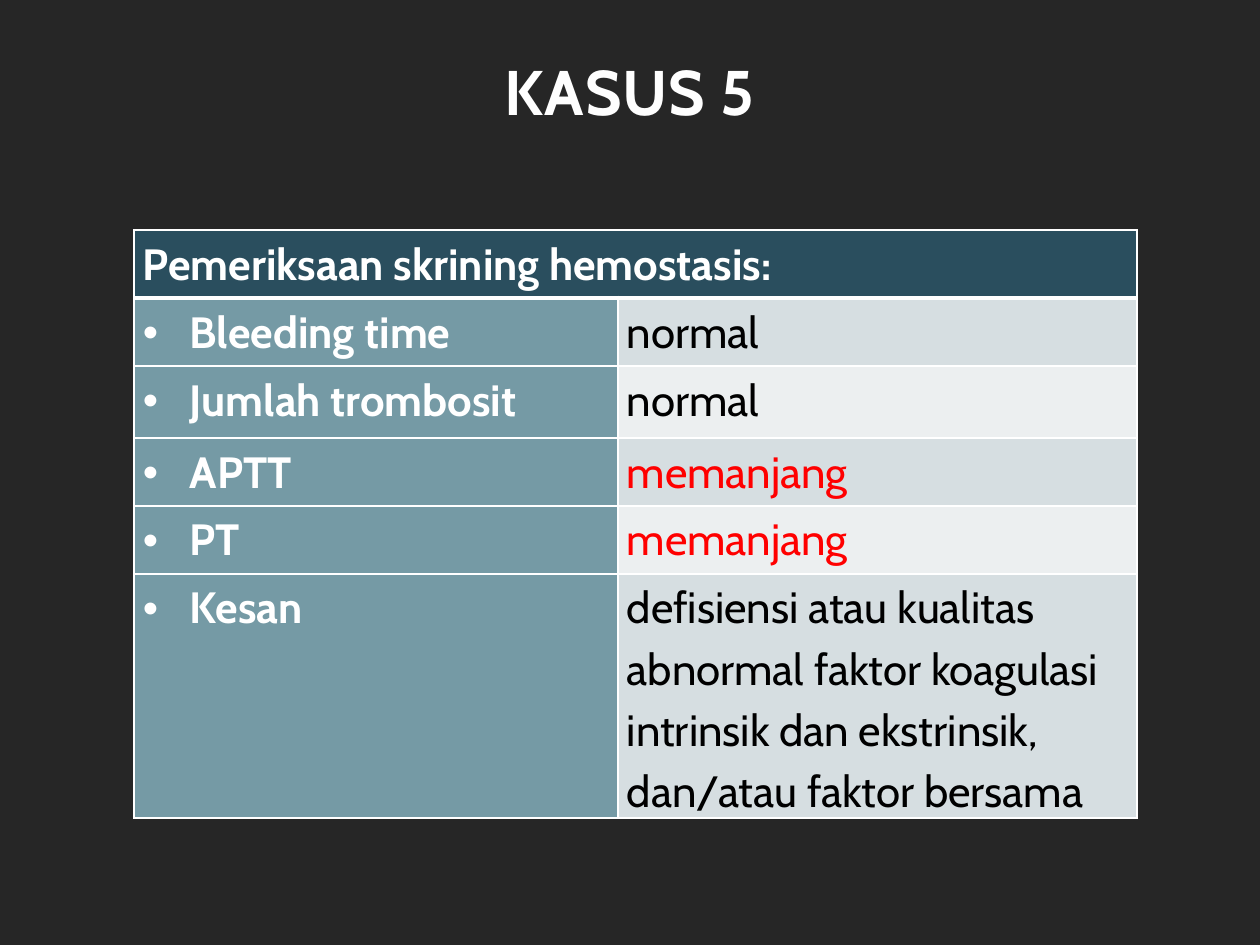
"""Build the KASUS 5 slide with its haemostasis screening table."""
import pptx
import pptx.dml.color
import pptx.enum.text
import pptx.oxml.ns
import pptx.util
from lxml import etree

RGBColor = pptx.dml.color.RGBColor
PP_ALIGN = pptx.enum.text.PP_ALIGN
PX = 914400 // 126
FONT = "Cabin"
BACKGROUND = RGBColor(0x26, 0x26, 0x26)
TITLE = RGBColor(0xFE, 0xFE, 0xFE)
WHITE = RGBColor(0xFF, 0xFF, 0xFF)
BLACK = RGBColor(0x00, 0x00, 0x00)
RED = RGBColor(0xFF, 0x00, 0x00)
HEADER = RGBColor(0x2A, 0x4E, 0x5E)
LABEL = RGBColor(0x75, 0x9A, 0xA5)
BANDS = [RGBColor(0xD6, 0xDE, 0xE1), RGBColor(0xEC, 0xEF, 0xF0)]

HEADING = "Pemeriksaan skrining hemostasis:"
RESULTS = [
    ("Bleeding time", "normal", BLACK),
    ("Jumlah trombosit", "normal", BLACK),
    ("APTT", "memanjang", RED),
    ("PT", "memanjang", RED),
    ("Kesan", "defisiensi atau kualitas abnormal faktor koagulasi intrinsik "
     "dan ekstrinsik, dan/atau faktor bersama", BLACK),
]
COL_WIDTHS = [484, 519]
ROW_HEIGHTS = [68, 68, 72, 68, 68, 244]


def format_run(p, size, color, bold):
    r = p.runs[0]
    r.font.name = FONT
    r.font.size = pptx.util.Pt(size)
    r.font.bold = bold
    r.font.color.rgb = color
    return r


def fill_cell(cell, text, color, bold, fill, bottom=1):
    cell.margin_left = cell.margin_right = 9 * PX
    cell.margin_top = cell.margin_bottom = 0
    tcPr = cell._tc.get_or_add_tcPr()
    for side, width in (("L", 1), ("R", 1), ("T", 1), ("B", bottom)):
        ln = etree.SubElement(tcPr, pptx.oxml.ns.qn(f"a:ln{side}"), w=str(pptx.util.Pt(width)))
        solid = etree.SubElement(ln, pptx.oxml.ns.qn("a:solidFill"))
        etree.SubElement(solid, pptx.oxml.ns.qn("a:srgbClr"), val=str(WHITE))
    cell.fill.solid()
    cell.fill.fore_color.rgb = fill
    p = cell.text_frame.paragraphs[0]
    p.text = text
    p.line_spacing = 1.15
    if text:
        format_run(p, 25, color, bold)
    return p


prs = pptx.Presentation()
prs.slide_width = 1260 * PX
prs.slide_height = 945 * PX
s = prs.slides.add_slide(prs.slide_layouts[6])
s.background.fill.solid()
s.background.fill.fore_color.rgb = BACKGROUND

tf = s.shapes.add_textbox(63 * PX, -24 * PX, 1134 * PX, 158 * PX).text_frame
tf.word_wrap = True
tf.vertical_anchor = pptx.enum.text.MSO_ANCHOR.BOTTOM
p = tf.paragraphs[0]
p.text = "KASUS 5"
p.alignment = PP_ALIGN.CENTER
r = format_run(p, 36, TITLE, True)
r.font._element.set("spc", "50")

table = s.shapes.add_table(
    len(ROW_HEIGHTS), len(COL_WIDTHS), 134 * PX, 230 * PX,
    sum(COL_WIDTHS) * PX, sum(ROW_HEIGHTS) * PX).table
for column, width in zip(table.columns, COL_WIDTHS):
    column.width = width * PX
for row, height in zip(table.rows, ROW_HEIGHTS):
    row.height = height * PX

table.cell(0, 0).merge(table.cell(0, 1))
for col, text in enumerate((HEADING, "")):
    fill_cell(table.cell(0, col), text, WHITE, True, HEADER, bottom=3)

for i, (label, result, color) in enumerate(RESULTS):
    p = fill_cell(table.cell(i + 1, 0), label, WHITE, True, LABEL, bottom=1)
    p.alignment = PP_ALIGN.JUSTIFY
    pPr = p._p.get_or_add_pPr()
    pPr.set("marL", str(47 * PX))
    pPr.set("indent", str(-47 * PX))
    etree.SubElement(pPr, pptx.oxml.ns.qn("a:buFont"), typeface="Arial")
    etree.SubElement(pPr, pptx.oxml.ns.qn("a:buChar"), char="•")
    fill_cell(table.cell(i + 1, 1), result, color, False, BANDS[i % 2])

for cell in (table.cell(1, 0), table.cell(1, 1)):
    cell._tc.tcPr.find(pptx.oxml.ns.qn("a:lnT")).set("w", str(pptx.util.Pt(3)))

prs.save("out.pptx")
